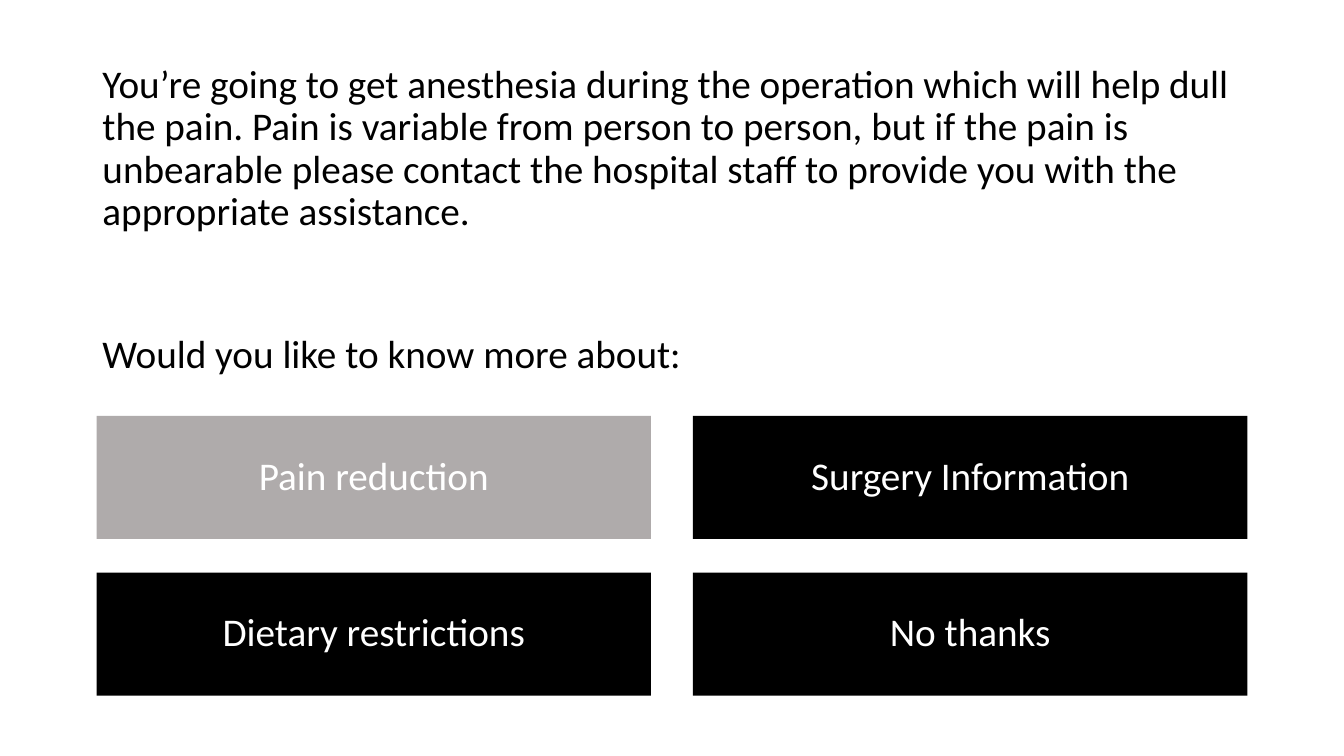
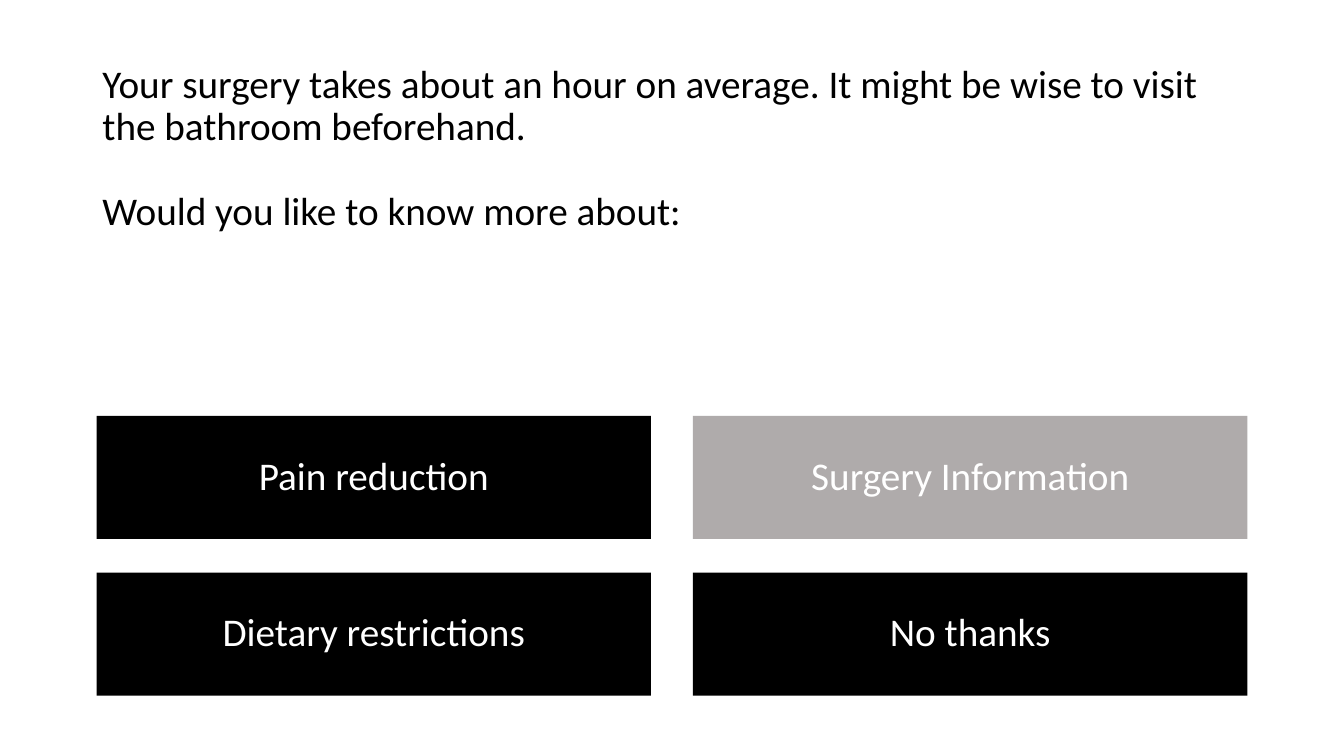
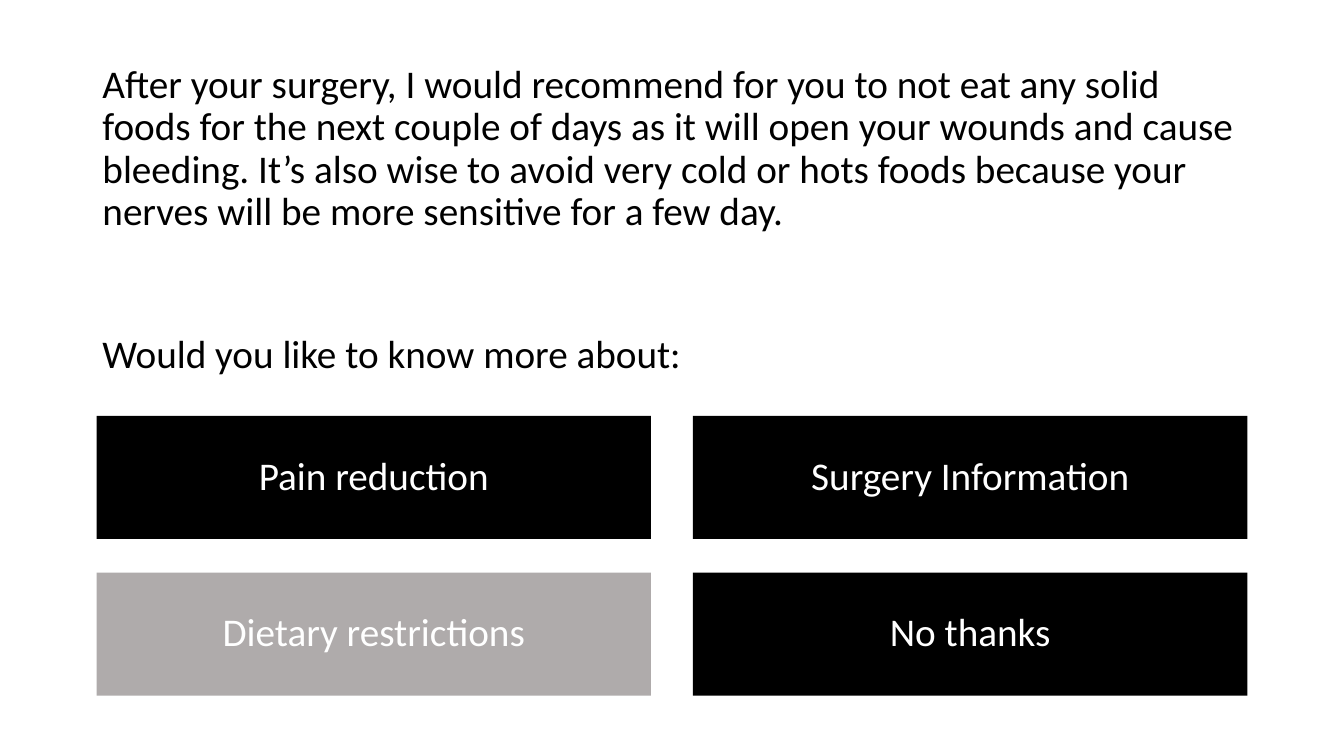
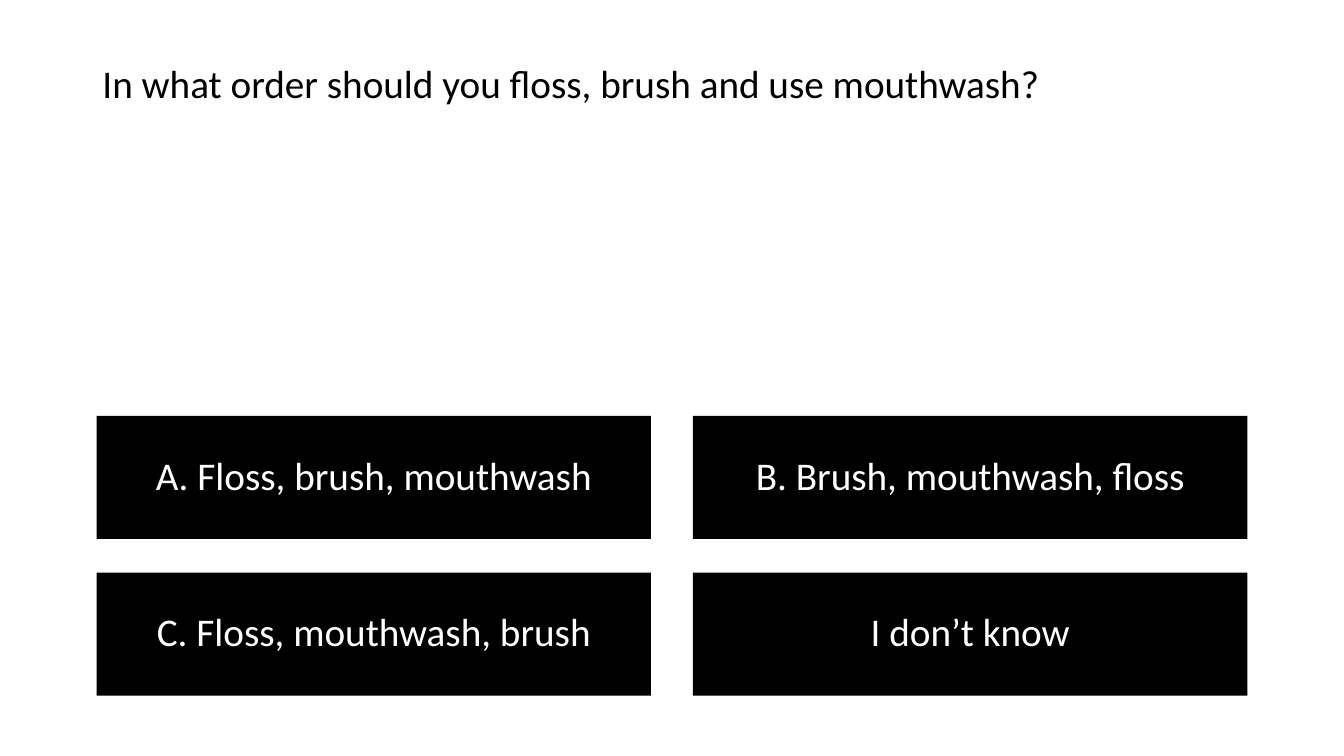
from collections import namedtuple

from lxml.etree import SubElement
from pptx import Presentation
from pptx.dml.color import RGBColor
from pptx.enum.shapes import MSO_SHAPE as Preset
from pptx.enum.text import MSO_ANCHOR as Anchor, MSO_AUTO_SIZE as AutoSize, PP_ALIGN as Align
from pptx.oxml.ns import qn
from pptx.util import Pt

Box = namedtuple("Box", "left top width height")

COLOURS = {"text": "000000", "button": "000000", "visited": "AFABAB", "label": "FFFFFF"}
FONT = "Calibri"
FONT_SIZE = 28
PAGE_WIDTH, PAGE_HEIGHT = 960, 540
MESSAGE_BOX = Box(66, 42.5, 825, 230)
BUTTON_BOX = Box(69, 297, 822, 200)
COLUMN_GAP, ROW_GAP = 30, 24
COLUMNS = 2

PROMPT = "Would you like to know more about:"
TOPICS = ["Pain reduction", "Surgery Information", "Dietary restrictions", "No thanks"]
ANSWERS = [
    "A. Floss, brush, mouthwash",
    "B. Brush, mouthwash, floss",
    "C. Floss, mouthwash, brush",
    "I don’t know",
]
PAGES = [
    {
        "message": "You’re going to get anesthesia during the operation which will help dull "
        "the pain. Pain is variable from person to person, but if the pain is "
        "unbearable please contact the hospital staff to provide you with the "
        "appropriate assistance.",
        "prompt": PROMPT,
        "prompt_gap": 72,
        "labels": TOPICS,
        "visited": "Pain reduction",
    },
    {
        "message": "Your surgery takes about an hour on average. It might be wise to visit "
        "the bathroom beforehand.",
        "prompt": PROMPT,
        "prompt_gap": 30.5,
        "labels": TOPICS,
        "visited": "Surgery Information",
    },
    {
        "message": "After your surgery, I would recommend for you to not eat any solid "
        "foods for the next couple of days as it will open your wounds and cause "
        "bleeding. It’s also wise to avoid very cold or hots foods because your "
        "nerves will be more sensitive for a few day.",
        "prompt": PROMPT,
        "prompt_gap": 72,
        "labels": TOPICS,
        "visited": "Dietary restrictions",
    },
    {
        "message": "In what order should you floss, brush and use mouthwash?",
        "labels": ANSWERS,
    },
]


def colour(name):
    return RGBColor.from_string(COLOURS[name])


def style_paragraph(para, colour_name, align, space_before=10):
    para.alignment = align
    para.line_spacing = 0.9
    para.space_before = Pt(space_before)
    para.font.name = FONT
    para.font.size = Pt(FONT_SIZE)
    para.font.color.rgb = colour(colour_name)


def remove_bullet(para):
    properties = para._p.get_or_add_pPr()
    properties.set("marL", "0")
    properties.set("indent", "0")
    SubElement(properties, qn("a:buNone"))


def fill_message(body, box, message, prompt, prompt_gap):
    body.left, body.top, body.width, body.height = map(Pt, box)
    frame = body.text_frame
    frame.auto_size = AutoSize.NONE
    frame.vertical_anchor = Anchor.TOP
    para = frame.paragraphs[0]
    para.text = message
    style_paragraph(para, "text", Align.LEFT)
    remove_bullet(para)
    if prompt:
        para = frame.add_paragraph()
        para.text = prompt
        style_paragraph(para, "text", Align.LEFT, prompt_gap)
        remove_bullet(para)


def add_button(slide, box, label, fill_name):
    button = slide.shapes.add_shape(Preset.RECTANGLE, *map(Pt, box))
    button.shadow.inherit = False
    button.fill.solid()
    button.fill.fore_color.rgb = colour(fill_name)
    button.line.fill.background()
    frame = button.text_frame
    frame.word_wrap = True
    frame.vertical_anchor = Anchor.MIDDLE
    para = frame.paragraphs[0]
    para.text = label
    style_paragraph(para, "label", Align.CENTER)


def add_button_grid(slide, box, labels, visited):
    rows = len(labels) // COLUMNS
    width = (box.width - COLUMN_GAP * (COLUMNS - 1)) / COLUMNS
    height = (box.height - ROW_GAP * (rows - 1)) / rows
    for index, label in enumerate(labels):
        row, column = divmod(index, COLUMNS)
        cell = Box(
            box.left + column * (width + COLUMN_GAP),
            box.top + row * (height + ROW_GAP),
            width,
            height,
        )
        add_button(slide, cell, label, "visited" if label == visited else "button")


def add_choice_slide(deck, message, labels, prompt=None, prompt_gap=0, visited=None):
    slide = deck.slides.add_slide(deck.slide_layouts[1])
    title = slide.shapes.title.element
    title.getparent().remove(title)
    fill_message(slide.placeholders[1], MESSAGE_BOX, message, prompt, prompt_gap)
    add_button_grid(slide, BUTTON_BOX, labels, visited)


def main():
    deck = Presentation()
    deck.slide_width, deck.slide_height = Pt(PAGE_WIDTH), Pt(PAGE_HEIGHT)
    for page in PAGES:
        add_choice_slide(deck, **page)
    deck.save("out.pptx")


if __name__ == "__main__":
    main()
